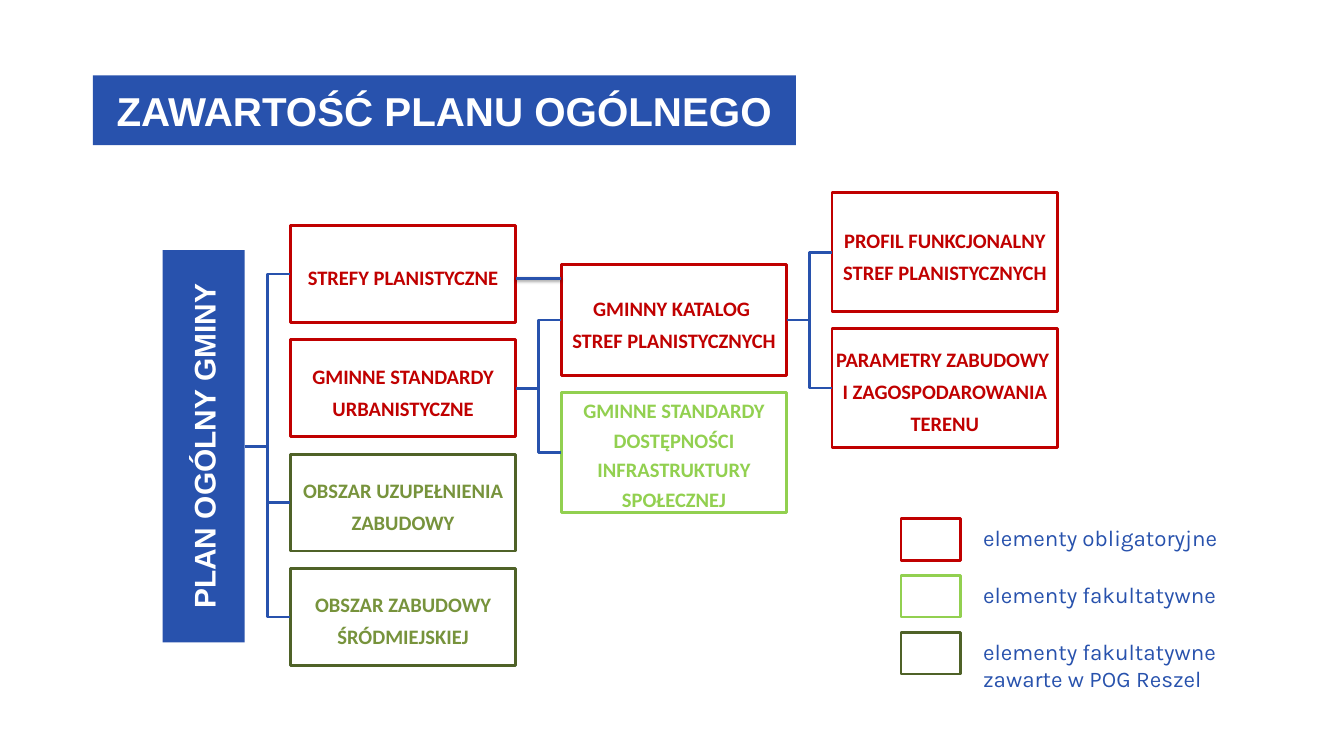
from dataclasses import dataclass

from lxml.etree import SubElement
from pptx import Presentation
from pptx.dml.color import RGBColor as Rgb
from pptx.enum.shapes import MSO_CONNECTOR as Conn, MSO_SHAPE as Shape
from pptx.enum.text import MSO_ANCHOR as Anchor, PP_ALIGN as Align
from pptx.oxml.ns import qn
from pptx.util import Cm, Pt


@dataclass(frozen=True)
class Theme:
    blue: str = "2852AD"
    white: str = "FFFFFF"
    red: str = "C00000"
    lime: str = "92D050"
    olive: str = "4F6228"
    olive_text: str = "77933C"
    head_font: str = "Arial"
    box_font: str = "Calibri"
    legend_font: str = "Karla"
    title_size: float = 43.2
    root_size: float = 32
    box_size: float = 22
    legend_size: float = 24
    border: float = 3
    link: float = 2.75


def write(tf, text, *, font, size, color, bold=False, align=Align.LEFT,
          anchor=Anchor.TOP, spacing=None, insets=None):
    tf.word_wrap = True
    tf.vertical_anchor = anchor
    if insets:
        tf.margin_left = tf.margin_right = Cm(insets[0])
        tf.margin_top = tf.margin_bottom = Cm(insets[1])
    p = tf.paragraphs[0]
    p.text = text
    p.alignment = align
    p.line_spacing = spacing
    for r in p.runs:
        r.font.name = font
        r.font.size = Pt(size)
        r.font.bold = bold
        r.font.color.rgb = Rgb.from_string(color)


class Diagram:
    def __init__(self, slide, theme):
        self.s = slide
        self.t = theme

    def title(self, text, x, y, w, h):
        sp = self.s.shapes.title
        sp.left, sp.top, sp.width, sp.height = Cm(x), Cm(y), Cm(w), Cm(h)
        sp.fill.solid()
        sp.fill.fore_color.rgb = Rgb.from_string(self.t.blue)
        write(sp.text_frame, text, font=self.t.head_font, size=self.t.title_size,
              color=self.t.white, bold=True, align=Align.CENTER,
              anchor=Anchor.MIDDLE, insets=(0.61, 0.46))

    def rect(self, x, y, w, h, fill, line=None):
        sp = self.s.shapes.add_shape(Shape.RECTANGLE, Cm(x), Cm(y), Cm(w), Cm(h))
        sp.shadow.inherit = False
        sp.fill.solid()
        sp.fill.fore_color.rgb = Rgb.from_string(fill)
        if line:
            sp.line.color.rgb = Rgb.from_string(line)
            sp.line.width = Pt(self.t.border)
        else:
            sp.line.fill.background()
        return sp

    def root(self, text, x, y, w, h):
        sp = self.rect(x, y, w, h, self.t.blue)
        sp.rotation = 270
        write(sp.text_frame, text, font=self.t.head_font, size=self.t.root_size,
              color=self.t.white, bold=True, align=Align.CENTER,
              anchor=Anchor.MIDDLE, insets=(0.05, 0.05))
        return sp

    def box(self, text, x, y, w, h, line, color=None, spacing=1.3):
        sp = self.rect(x, y, w, h, self.t.white, line)
        write(sp.text_frame, text, font=self.t.box_font, size=self.t.box_size,
              color=color or line, bold=True, align=Align.CENTER,
              anchor=Anchor.MIDDLE, spacing=spacing, insets=(0.05, 0.05))
        return sp

    def legend(self, text, x, y, color):
        self.rect(x, y, 2.26, 1.57, self.t.white, color)
        sp = self.s.shapes.add_textbox(Cm(x + 2.85), Cm(y + 0.08), Cm(11.63), Cm(1.28))
        write(sp.text_frame, text, font=self.t.legend_font,
              size=self.t.legend_size, color=self.t.blue)

    def connector(self, kind, x1, y1, x2, y2, width):
        c = self.s.shapes.add_connector(kind, x1, y1, x2, y2)
        c.line.color.rgb = Rgb.from_string(self.t.blue)
        c.line.width = Pt(width)
        return SubElement(c._element.spPr, qn("a:effectLst"))

    def branch(self, source, targets):
        half = source.height if source.rotation else source.width
        x = source.left + source.width // 2 + half // 2
        y = source.top + source.height // 2
        for sp in targets:
            self.connector(Conn.ELBOW, x, y, sp.left, sp.top + sp.height // 2, self.t.link)

    def shadowed_line(self, source, target, y):
        effects = self.connector(Conn.STRAIGHT, source.left + source.width, Cm(y),
                                 target.left, Cm(y), self.t.border)
        shadow = SubElement(effects, qn("a:outerShdw"), blurRad="40000",
                            dist="20000", dir="5400000", rotWithShape="0")
        color = SubElement(shadow, qn("a:srgbClr"), val="000000")
        SubElement(color, qn("a:alpha"), val="38000")


def main():
    prs = Presentation()
    prs.slide_width, prs.slide_height = Cm(50.8), Cm(28.58)
    t = Theme()
    d = Diagram(prs.slides.add_slide(prs.slide_layouts[5]), t)

    d.title("ZAWARTOŚĆ PLANU OGÓLNEGO", 3.51, 2.85, 26.57, 2.64)
    root = d.root("PLAN OGÓLNY GMINY", 0.28, 15.32, 14.83, 3.1)

    w = 8.53
    col1, col2, col3 = (10.97 + 10.24 * i for i in range(3))
    parts = [
        ("STREFY PLANISTYCZNE", t.red, t.red),
        ("GMINNE STANDARDY URBANISTYCZNE", t.red, t.red),
        ("OBSZAR UZUPEŁNIENIA ZABUDOWY", t.olive, t.olive_text),
        ("OBSZAR ZABUDOWY ŚRÓDMIEJSKIEJ", t.olive, t.olive_text),
    ]
    zones, standards, infill, downtown = [
        d.box(text, col1, 8.53 + 4.32 * i, w, 3.66, line, color)
        for i, (text, line, color) in enumerate(parts)
    ]
    catalog = d.box("GMINNY KATALOG \nSTREF PLANISTYCZNYCH", col2, 10.01, w, 4.19, t.red)
    access = d.box("GMINNE STANDARDY DOSTĘPNOŚCI INFRASTRUKTURY SPOŁECZNEJ",
                   col2, 14.83, w, 4.55, t.lime, spacing=1.2)
    profile = d.box("PROFIL FUNKCJONALNY STREF PLANISTYCZNYCH", col3, 7.29, w, 4.5, t.red)
    params = d.box("PARAMETRY ZABUDOWY \nI ZAGOSPODAROWANIA TERENU",
                   col3, 12.42, w, 4.5, t.red)

    d.branch(root, [zones, infill, downtown])
    d.branch(standards, [catalog, access])
    d.branch(catalog, [profile, params])
    d.shadowed_line(zones, catalog, 10.54)

    legend = [
        ("elementy obligatoryjne", t.red),
        ("elementy fakultatywne", t.lime),
        ("elementy fakultatywne zawarte w POG Reszel", t.olive),
    ]
    for i, (text, color) in enumerate(legend):
        d.legend(text, 34.06, 19.61 + 2.15 * i, color)

    prs.save("out.pptx")


if __name__ == "__main__":
    main()
